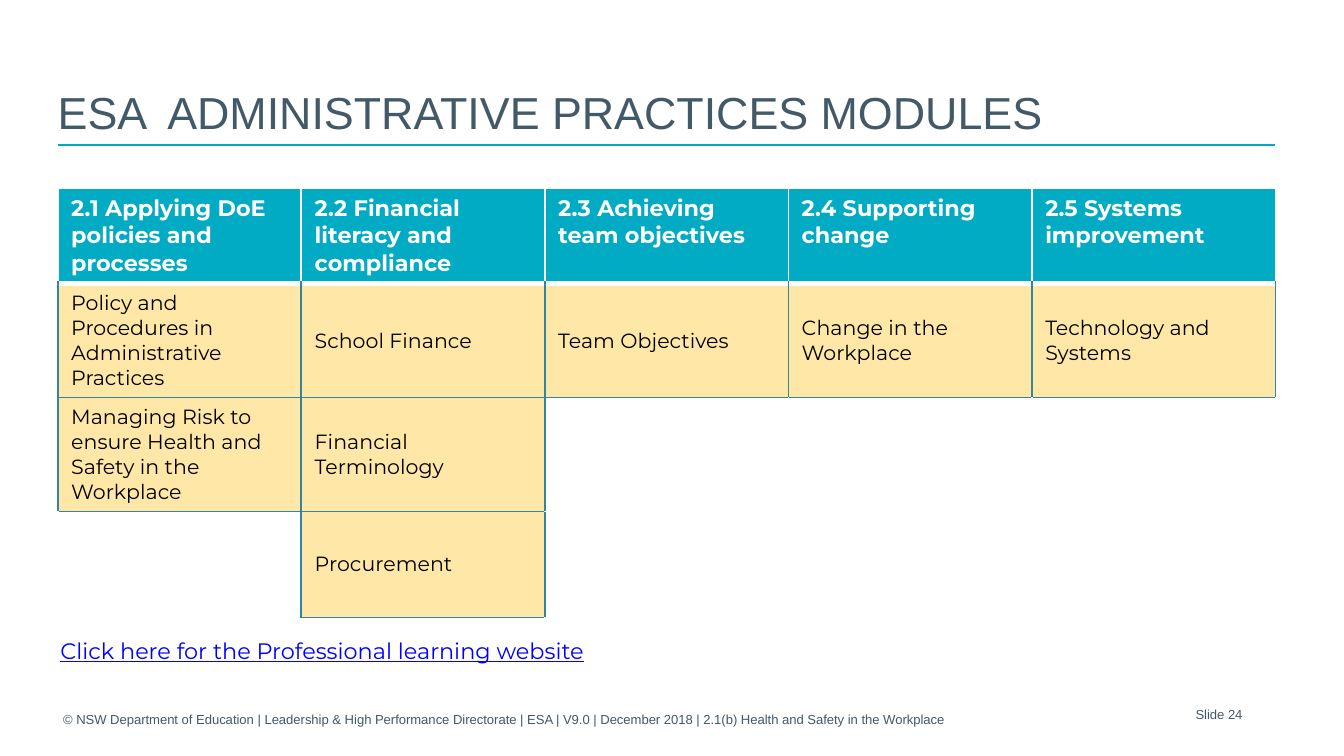
from dataclasses import dataclass

from lxml import etree
from pptx import Presentation
from pptx import util as u
from pptx.dml import color
from pptx.enum import shapes, text
from pptx.oxml import ns


# Theme
@dataclass(frozen=True)
class Theme:
    teal: str = "00ABC3"
    slate: str = "425968"
    sand: str = "FFE8A7"
    edge: str = "31859C"
    white: str = "FFFFFF"
    black: str = "000000"
    blue: str = "0000FF"
    sans: str = "Arial"
    body: str = "Montserrat"
    title: int = 24
    head: int = 12
    cell: int = 11
    foot: int = 7


@dataclass(frozen=True)
class Font:
    name: str
    size: int
    hue: str
    bold: bool = False
    under: bool = False


@dataclass(frozen=True)
class Label:
    words: str
    box: tuple[float, float, float, float]
    font: Font
    anchor: text.MSO_ANCHOR = text.MSO_ANCHOR.BOTTOM
    align: text.PP_ALIGN = text.PP_ALIGN.LEFT
    inset: float = 0.1


T = Theme()
SMALL = Font(T.sans, T.foot, T.slate)
HEAD = Font(T.body, T.head, T.white, bold=True)
CELL = Font(T.body, T.cell, T.black)
WIDE = 10
HIGH = WIDE * 9 / 16
LEFT, TOP, WIDTH = 0.43, 1.4, 9.06
HEIGHTS = (0.41, 0.79, 0.79, 0.79)

# Content
LABELS = (
    Label("ESA  ADMINISTRATIVE PRACTICES MODULES", (LEFT, 0.3, WIDTH, 0.78),
          Font(T.sans, T.title, T.slate), inset=0),
    Label("© NSW Department of Education | Leadership & High Performance "
          "Directorate | ESA | V9.0 | December 2018 | "
          "2.1(b) Health and Safety in the Workplace",
          (0.47, 5.16, 8.11, 0.3), SMALL, inset=0),
    Label("Slide 24", (8.56, 5.12, 1.02, 0.3), SMALL,
          align=text.PP_ALIGN.CENTER),
    Label("Click here for the Professional learning website",
          (0.35, 4.69, 9.01, 0.5),
          Font(T.body, T.head, T.blue, under=True), text.MSO_ANCHOR.TOP),
)
ROWS = (
    ("2.1 Applying DoE policies and processes",
     "2.2 Financial literacy and compliance",
     "2.3 Achieving team objectives",
     "2.4 Supporting change",
     "2.5 Systems improvement"),
    ("Policy and Procedures in Administrative Practices", "School Finance",
     "Team Objectives", "Change in the Workplace", "Technology and Systems"),
    ("Managing Risk to ensure Health and Safety in the Workplace",
     "Financial Terminology", "", "", ""),
    ("", "Procurement", "", "", ""),
)


def rgb(hue: str) -> color.RGBColor:
    return color.RGBColor.from_string(hue)


def add_run(para, words: str, font: Font) -> None:
    run = para.add_run()
    run.text = words
    run.font.name = font.name
    run.font.size = u.Pt(font.size)
    run.font.bold = font.bold
    run.font.underline = font.under
    run.font.color.rgb = rgb(font.hue)


def add_label(slide, label: Label) -> None:
    box = slide.shapes.add_textbox(*map(u.Inches, label.box))
    frame = box.text_frame
    frame.word_wrap = True
    frame.vertical_anchor = label.anchor
    frame.margin_left = u.Inches(label.inset)
    para = frame.paragraphs[0]
    para.alignment = label.align
    add_run(para, label.words, label.font)


def add_rule(slide) -> None:
    y = u.Inches(1.08)
    rule = slide.shapes.add_connector(
        shapes.MSO_CONNECTOR.STRAIGHT,
        u.Inches(LEFT), y, u.Inches(LEFT + WIDTH), y)
    rule.line.color.rgb = rgb(T.teal)
    rule.line.width = u.Pt(1)
    etree.SubElement(rule._element.spPr, ns.qn("a:effectLst"))


def set_edge(cell, side: str, hue: str, width: int) -> None:
    props = cell._tc.get_or_add_tcPr()
    line = etree.SubElement(props, ns.qn(f"a:ln{side}"), w=str(u.Pt(width)))
    fill = etree.SubElement(line, ns.qn("a:solidFill"))
    etree.SubElement(fill, ns.qn("a:srgbClr"), val=hue)


def is_full(row: int, col: int) -> bool:
    return (0 < row < len(ROWS) and 0 <= col < len(ROWS[0])
            and bool(ROWS[row][col]))


def edge_hue(row: int, col: int, down: int, right: int) -> str:
    """Body cells with words share a dark edge; the header stays white."""
    if row == 0 or row + down == 0:
        return T.white
    near = is_full(row, col) or is_full(row + down, col + right)
    return T.edge if near else T.white


def add_grid(slide) -> None:
    count = len(ROWS[0])
    grid = slide.shapes.add_table(
        len(ROWS), count, u.Inches(LEFT), u.Inches(TOP),
        u.Inches(WIDTH), u.Inches(sum(HEIGHTS))).table
    for col in grid.columns:
        col.width = u.Inches(WIDTH / count)
    sides = {"L": (0, -1), "R": (0, 1), "T": (-1, 0), "B": (1, 0)}
    for r, words in enumerate(ROWS):
        grid.rows[r].height = u.Inches(HEIGHTS[r])
        for c, word in enumerate(words):
            cell = grid.cell(r, c)
            # Borders come before the fill in the cell's properties
            for side, (down, right) in sides.items():
                wide = 3 if r == 0 and side == "B" else 1
                set_edge(cell, side, edge_hue(r, c, down, right), wide)
            if not word:
                cell.fill.background()
                continue
            cell.fill.solid()
            cell.fill.fore_color.rgb = rgb(T.sand if r else T.teal)
            cell.vertical_anchor = (text.MSO_ANCHOR.MIDDLE if r
                                    else text.MSO_ANCHOR.TOP)
            add_run(cell.text_frame.paragraphs[0], word, CELL if r else HEAD)


def main() -> None:
    deck = Presentation()
    deck.slide_width, deck.slide_height = u.Inches(WIDE), u.Inches(HIGH)
    slide = deck.slides.add_slide(deck.slide_layouts[6])
    # Title rule, module table, then text
    add_rule(slide)
    add_grid(slide)
    for label in LABELS:
        add_label(slide, label)
    deck.save("out.pptx")


if __name__ == "__main__":
    main()
